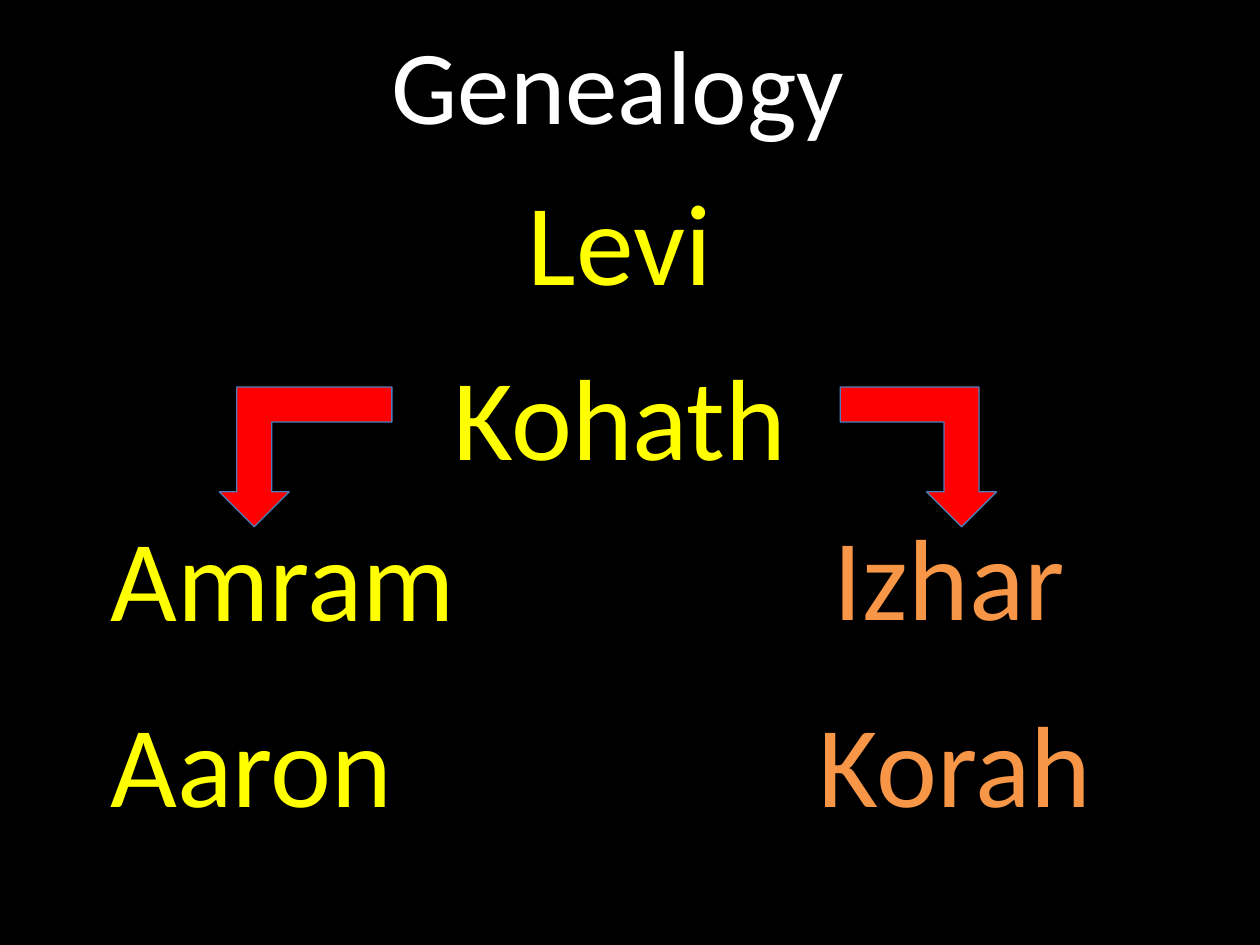
import pptx
import pptx.dml.color
import pptx.enum.shapes
import pptx.enum.text
import pptx.oxml.ns
import pptx.util

Cm = pptx.util.Cm
YELLOW, ORANGE, RED, WHITE = "FFFF00", "F79646", "FF0000", "FFFFFF"
NAMES = [
    ("Levi", 8.41, 0, 4.27, YELLOW),
    ("Kohath", 6.91, 3.53, 7.37, YELLOW),
    ("Amram", 0, 6.78, 7.57, YELLOW),
    ("Izhar", 14.58, 6.76, 5.21, ORANGE),
    ("Aaron", 0, 10.52, 6.3, YELLOW),
    ("Korah", 14.28, 10.52, 6.15, ORANGE),
]
ARROWS = [(2.44, 3.48, False), (14.96, 3.15, True)]


def paint(fmt, color):
    """Give a fill a solid colour from a hex string."""
    fmt.solid()
    fmt.fore_color.rgb = pptx.dml.color.RGBColor.from_string(color)


def add_run(p, text, size, color):
    """Add one formatted run to a paragraph."""
    r = p.add_run()
    r.text = text
    r.font.name = "Calibri"
    r.font.size = pptx.util.Pt(size)
    paint(r.font.fill, color)


def add_title(s, left, top, width, height):
    """Place the title placeholder in its box."""
    sp = s.shapes.title
    sp.left, sp.top, sp.width, sp.height = map(Cm, (left, top, width, height))
    tf = sp.text_frame
    tf.vertical_anchor = pptx.enum.text.MSO_ANCHOR.MIDDLE
    p = tf.paragraphs[0]
    p.alignment = pptx.enum.text.PP_ALIGN.CENTER
    add_run(p, "Genealogy ", 60, WHITE)


def add_names(s, left, top):
    """Place the family names relative to the tree's corner."""
    for name, x, y, width, color in NAMES:
        sp = s.shapes.add_textbox(Cm(left + x), Cm(top + y), Cm(width), Cm(3.07))
        tf = sp.text_frame
        tf.word_wrap = False
        tf.auto_size = pptx.enum.text.MSO_AUTO_SIZE.SHAPE_TO_FIT_TEXT
        add_run(tf.paragraphs[0], name, 66, color)


def add_arrows(s, left, top):
    """Place the two descent arrows relative to the tree's corner."""
    for x, width, flipped in ARROWS:
        sp = s.shapes.add_shape(
            pptx.enum.shapes.MSO_SHAPE.BENT_UP_ARROW,
            Cm(left + x), Cm(top + 4.5), Cm(width), Cm(2.82))
        sp.rotation = 180
        sp.shadow.inherit = False
        paint(sp.fill, RED)
        paint(sp.line.fill, "4B7EBC")
        sp.line.width = pptx.util.Pt(0.75)
        if flipped:
            xfrm = sp._element.spPr.find(pptx.oxml.ns.qn("a:xfrm"))
            xfrm.set("flipH", "1")


def main():
    """Build and save the genealogy slide."""
    prs = pptx.Presentation()
    prs.slide_width, prs.slide_height = Cm(25.4), Cm(19.05)
    s = prs.slides.add_slide(prs.slide_layouts.get_by_name("Title Only"))
    paint(s.background.fill, "000000")
    add_title(s, 1.27, 0.08, 22.86, 3.18)
    add_names(s, 1.98, 3.3)
    add_arrows(s, 1.98, 3.3)
    prs.save("out.pptx")


if __name__ == "__main__":
    main()
